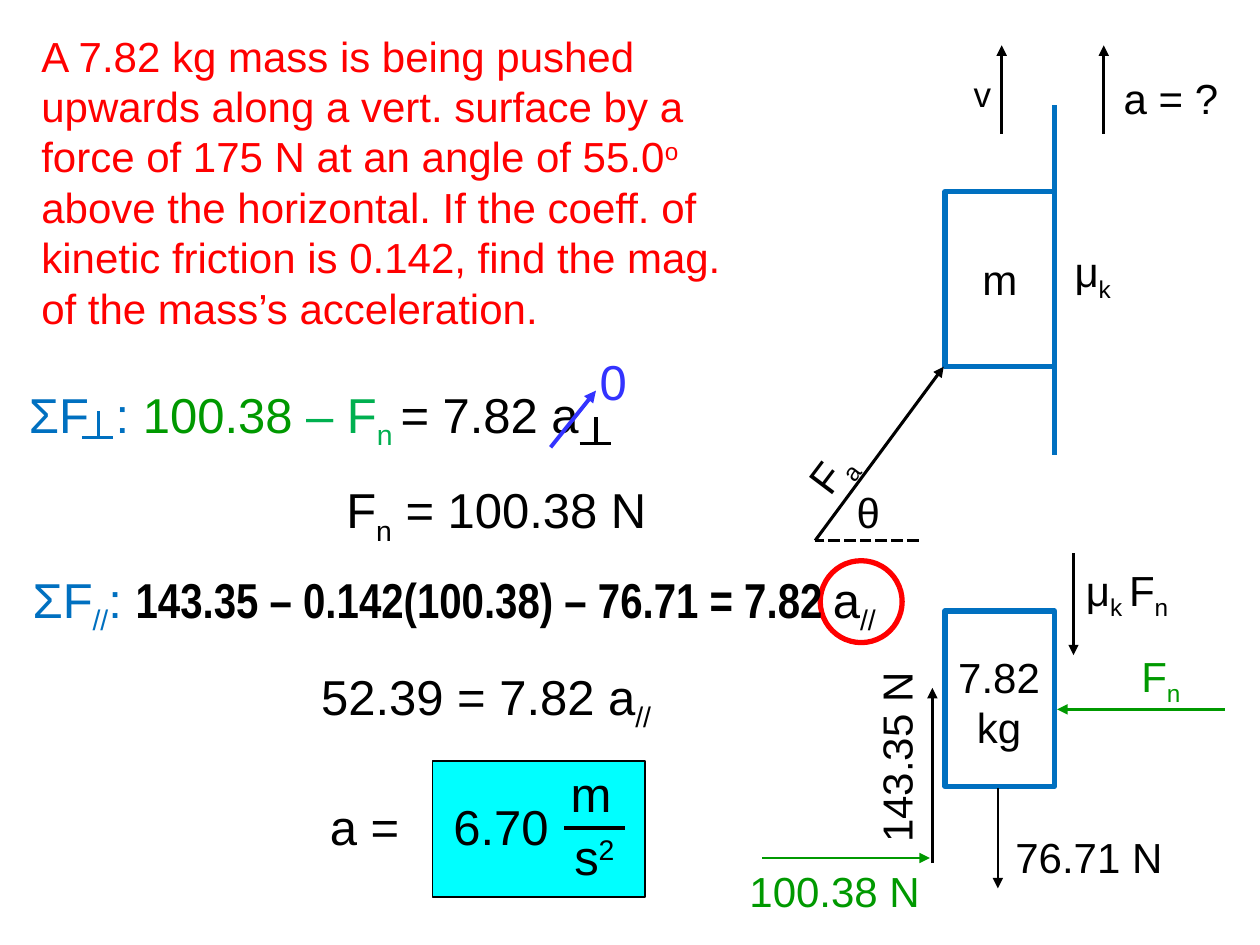
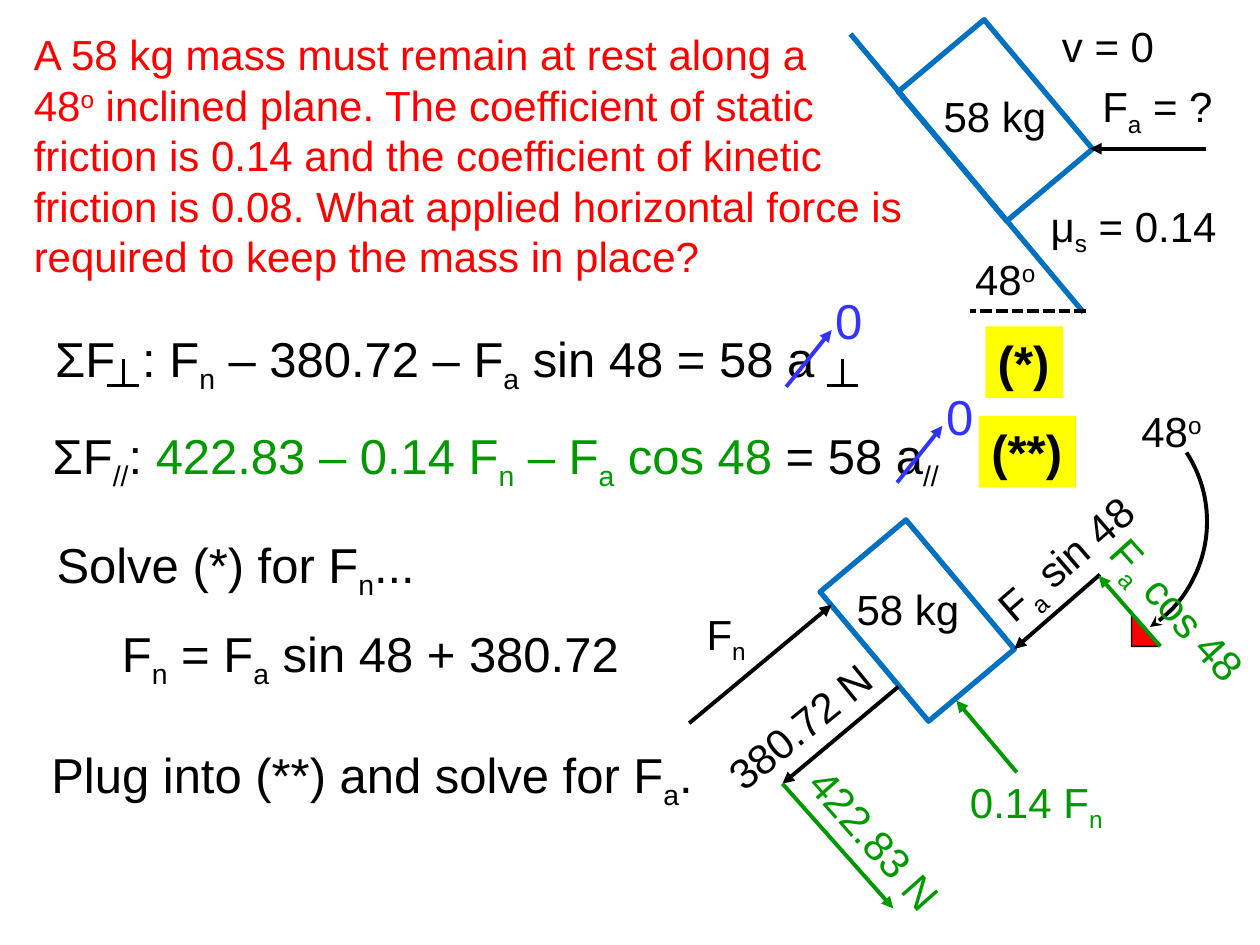
import lxml.etree
import pptx
import pptx.dml.color
import pptx.enum.dml
import pptx.enum.shapes
import pptx.enum.text
import pptx.oxml.ns
import pptx.util

Inches = pptx.util.Inches
Pt = pptx.util.Pt
RGBColor = pptx.dml.color.RGBColor
MSO_SHAPE = pptx.enum.shapes.MSO_SHAPE
qn = pptx.oxml.ns.qn

BLACK = RGBColor(0x00, 0x00, 0x00)
WHITE = RGBColor(0xFF, 0xFF, 0xFF)
RED = RGBColor(0xFF, 0x00, 0x00)
BLUE = RGBColor(0x00, 0x70, 0xC0)
GREEN = RGBColor(0x00, 0x99, 0x00)
LIGHT_GREEN = RGBColor(0x00, 0xB0, 0x50)
VIOLET = RGBColor(0x33, 0x33, 0xFF)
CYAN = RGBColor(0x00, 0xFF, 0xFF)
YELLOW = RGBColor(0xFF, 0xFF, 0x00)

BASELINES = {"_": "-25000", "^": "30000"}
COLOR_MARKS = {"~": GREEN, "@": LIGHT_GREEN, "#": BLACK, "!": BLACK}


def add_text(slide, left, top, width, height, size, color, text, rotation=0, tab_stop=None):
    box = slide.shapes.add_textbox(Inches(left), Inches(top), Inches(width), Inches(height))
    box.rotation = rotation
    frame = box.text_frame
    frame.word_wrap = True
    for index, line in enumerate(text.split("\n")):
        paragraph = frame.paragraphs[0] if index == 0 else frame.add_paragraph()
        if tab_stop:
            tabs = lxml.etree.SubElement(paragraph._p.get_or_add_pPr(), qn("a:tabLst"))
            lxml.etree.SubElement(tabs, qn("a:tab"), pos=str(Inches(tab_stop)), algn="l")
        paragraph.font.name = "Arial"
        paragraph.font.size = Pt(size)
        paragraph.font.color.rgb = color
        run_color = color
        for part in line.split("|"):
            mark = part[0]
            run_color = COLOR_MARKS.get(mark, run_color)
            run = paragraph.add_run()
            run.text = part[1:] if mark in BASELINES or mark in COLOR_MARKS else part
            if run_color != color:
                run.font.color.rgb = run_color
            if mark in BASELINES:
                run.font._rPr.set("baseline", BASELINES[mark])
            if mark == "!":
                run.font.name = "Arial Narrow"
                run.font.bold = True
    return box


def add_line(slide, x1, y1, x2, y2, color, width, arrow=True):
    connector = slide.shapes.add_connector(
        pptx.enum.shapes.MSO_CONNECTOR.STRAIGHT, Inches(x1), Inches(y1), Inches(x2), Inches(y2))
    connector.line.color.rgb = color
    connector.line.width = Pt(width)
    if arrow:
        lxml.etree.SubElement(connector.line._get_or_add_ln(), qn("a:tailEnd"), type="triangle")
    lxml.etree.SubElement(connector._element.spPr, qn("a:effectLst"))
    return connector


presentation = pptx.Presentation()
presentation.slide_width = Inches(10)
presentation.slide_height = Inches(7.5)
blank_layout = presentation.slide_layouts[6]
wall_slide = presentation.slides.add_slide(blank_layout)
incline_slide = presentation.slides.add_slide(blank_layout)

add_line(wall_slide, 8.37, 3.61, 8.37, 0.83, BLUE, 3, arrow=False)
add_line(incline_slide, 8.6, 2.48, 6.75, 0.27, BLUE, 3, arrow=False)

RECTANGLE = MSO_SHAPE.RECTANGLE
shapes = [
    (wall_slide, RECTANGLE, 7.5, 1.52, 0.87, 1.39, 0, WHITE, BLUE, 3),
    (wall_slide, RECTANGLE, 7.5, 4.85, 0.87, 1.39, 0, WHITE, BLUE, 3),
    (wall_slide, MSO_SHAPE.OVAL, 6.51, 4.45, 0.65, 0.65, 0, None, RED, 3),
    (wall_slide, RECTANGLE, 3.43, 6.04, 1.69, 1.08, 0, CYAN, BLACK, 0.75),
    (incline_slide, RECTANGLE, 7.23, 0.51, 1.34, 0.89, 50, None, BLUE, 3),
    (incline_slide, RECTANGLE, 6.61, 4.48, 1.34, 0.89, 50, None, BLUE, 3),
    (incline_slide, MSO_SHAPE.RIGHT_TRIANGLE, 8.98, 4.88, 0.22, 0.25, 0, RED, BLACK, 0.75),
    (incline_slide, MSO_SHAPE.ARC, 7.58, 3.14, 2, 2, 56.8, None, BLACK, 2.25),
]
for slide, kind, left, top, width, height, rotation, fill, outline, weight in shapes:
    shape = slide.shapes.add_shape(kind, Inches(left), Inches(top), Inches(width), Inches(height))
    shape.rotation = rotation
    shape.shadow.inherit = False
    shape.line.color.rgb = outline
    shape.line.width = Pt(weight)
    if fill is None:
        shape.fill.background()
    else:
        shape.fill.solid()
        shape.fill.fore_color.rgb = fill
    if kind == MSO_SHAPE.ARC:
        lxml.etree.SubElement(shape.line._get_or_add_ln(), qn("a:tailEnd"), type="stealth")

wall_texts = [
    (0.23, 0.19, 5.64, 2.52, 24, RED,
     "A 7.82 kg mass is being pushed upwards along a vert. surface by a force of 175 N at an "
     "angle of 55.0|^o |above the horizontal. If the coeff. of kinetic friction is 0.142, "
     "find the mag. of the mass’s acceleration."),
    (7.63, 0.53, 0.57, 0.54, 20, BLACK, "v"),
    (8.82, 0.53, 1.03, 0.54, 24, BLACK, "a = ?"),
    (8.43, 1.9, 0.66, 0.52, 24, BLACK, "μ|_k"),
    (6.2, 3.22, 1.19, 0.52, 24, BLACK, "F|_a", 307),
    (6.7, 3.81, 1.03, 0.57, 24, BLACK, "θ"),
    (8.52, 4.43, 1, 0.5, 24, BLACK, "μ|_k |F|_n"),
    (8.96, 5.11, 0.6, 0.5, 24, GREEN, "F|_n"),
    (6.26, 5.78, 1.7, 0.5, 24, BLACK, " 143.35 N", 270),
    (7.96, 6.55, 1.45, 0.5, 24, BLACK, "76.71 N"),
    (5.85, 6.82, 1.57, 0.5, 24, GREEN, "100.38 N"),
    (0.13, 3, 5.25, 0.57, 28, BLUE, "ΣF\t: |~100.38 |@– F|_n |#= 7.82 a", 0, 0.69),
    (2.65, 3.76, 2.7, 0.57, 28, BLACK, "F|_n| = 100.38 N"),
    (0.16, 4.47, 7.38, 0.57, 28, BLUE,
     "ΣF|_//|: |!143.35 – 0.142(100.38) – 76.71 = 7.82 |#a|_//"),
    (2.45, 5.24, 3, 0.57, 28, BLACK, "52.39 = 7.82 a|_//"),
    (2.52, 6.27, 2.1, 0.57, 28, BLACK, "a =\t6.70", 0, 0.98),
    (4.43, 6.01, 0.6, 0.57, 28, BLACK, "m"),
    (4.46, 6.51, 0.6, 0.57, 28, BLACK, "s|^2"),
]
for text in wall_texts:
    add_text(wall_slide, *text)

for left, top, width, height, text in [
    (7.46, 1.96, 0.95, 0.5, "m"),
    (7.48, 5.12, 0.9, 0.91, "7.82\nkg"),
]:
    mass_label = add_text(wall_slide, left, top, width, height, 24, BLACK, text)
    for paragraph in mass_label.text_frame.paragraphs:
        paragraph.alignment = pptx.enum.text.PP_ALIGN.CENTER

incline_texts = [
    (0.17, 0.18, 7.24, 2.12, 24, RED,
     "A 58 kg mass must remain at rest along a\n"
     "48|^o| inclined plane. The coefficient of static\n"
     "friction is 0.14 and the coefficient of kinetic\n"
     "friction is 0.08. What applied horizontal force is required to keep the mass in place?"),
    (8.33, 0.11, 1.13, 0.6, 24, BLACK, "v = 0"),
    (8.65, 0.59, 1.13, 0.6, 24, BLACK, "F|_a| = ?"),
    (7.39, 0.67, 1.1, 0.6, 24, BLACK, "58 kg"),
    (8.24, 1.54, 1.64, 0.6, 24, BLACK, "μ|_s| = 0.14"),
    (7.64, 1.96, 0.79, 0.6, 24, BLACK, "48|^o"),
    (8.96, 3.17, 0.79, 0.6, 24, BLACK, "48|^o"),
    (6.7, 4.58, 1.1, 0.6, 24, BLACK, "58 kg"),
    (7.71, 4.08, 1.76, 0.6, 24, BLACK, "F|_a| sin 48", 319.1),
    (8.51, 4.59, 1.64, 0.6, 24, GREEN, "F|_a| cos 48", 48),
    (5.51, 4.78, 0.74, 0.6, 24, BLACK, "F|_n"),
    (5.59, 5.46, 1.68, 0.6, 24, BLACK, "380.72 N", 320.9),
    (6.19, 6.42, 1.56, 0.45, 24, GREEN, "422.83 N", 48.5),
    (7.6, 6.11, 1.34, 0.6, 24, GREEN, "0.14 F|_n"),
    (0.34, 2.56, 6.5, 0.57, 28, BLACK,
     "ΣF\t: F|_n| – 380.72 – F|_a| sin 48 = 58 a", 0, 0.69),
    (0.32, 3.33, 7.5, 0.57, 28, BLACK,
     "ΣF|_//|: |~422.83 – 0.14 F|_n| – F|_a| cos 48|# = 58 a|_//"),
    (0.35, 4.19, 3.15, 0.57, 28, BLACK, "Solve (*) for F|_n|..."),
    (0.87, 4.9, 4.4, 0.57, 28, BLACK, "F|_n| = F|_a| sin 48 + 380.72"),
    (0.31, 5.86, 5.4, 0.57, 28, BLACK, "Plug into (**) and solve for F|_a|."),
]
for text in incline_texts:
    add_text(incline_slide, *text)

for left, top, width, text in [(7.77, 3.3, 0.77, "(**)"), (7.82, 2.59, 0.62, "(*)")]:
    equation_tag = add_text(incline_slide, left, top, width, 0.57, 28, BLACK, text)
    equation_tag.text_frame.paragraphs[0].font.bold = True
    equation_tag.fill.solid()
    equation_tag.fill.fore_color.rgb = YELLOW

arrows = [
    (wall_slide, 7.95, 1.06, 7.95, 0.36, BLACK, 1.5),
    (wall_slide, 8.76, 1.06, 8.76, 0.36, BLACK, 1.5),
    (wall_slide, 6.47, 4.29, 7.49, 2.91, BLACK, 1.75),
    (wall_slide, 8.52, 4.39, 8.52, 5.2, BLACK, 1.5),
    (wall_slide, 9.72, 5.63, 8.39, 5.63, GREEN, 1.5),
    (wall_slide, 7.4, 6.85, 7.4, 5.46, BLACK, 1.5),
    (wall_slide, 7.92, 6.25, 7.92, 7.05, BLACK, 1.5),
    (wall_slide, 6.05, 6.81, 7.38, 6.81, GREEN, 1.5),
    (incline_slide, 9.57, 1.18, 8.65, 1.18, BLACK, 2.25),
    (incline_slide, 8.73, 4.56, 8.05, 5.15, BLACK, 2.25),
    (incline_slide, 9.21, 5.13, 8.72, 4.57, GREEN, 2.25),
    (incline_slide, 7.13, 5.45, 6.21, 6.22, BLACK, 2.25),
    (incline_slide, 6.21, 6.22, 7.09, 7.21, GREEN, 2.25),
    (incline_slide, 5.47, 5.74, 6.6, 4.8, BLACK, 2.25),
    (incline_slide, 8.07, 6.13, 7.59, 5.56, GREEN, 2.25),
]
for arrow in arrows:
    add_line(*arrow)

add_line(wall_slide, 4.48, 6.57, 4.96, 6.57, BLACK, 2.25, arrow=False)

for slide, left, right, y in [(wall_slide, 6.47, 7.29, 4.29), (incline_slide, 7.7, 8.62, 2.47)]:
    horizontal = add_line(slide, right, y, left, y, BLACK, 2.25, arrow=False)
    horizontal.line.dash_style = pptx.enum.dml.MSO_LINE.SQUARE_DOT

for slide, left, bottom, color in [
    (wall_slide, 0.65, 3.47, BLUE),
    (wall_slide, 4.6, 3.52, BLACK),
    (incline_slide, 0.85, 3.06, BLACK),
    (incline_slide, 6.56, 3.06, BLACK),
]:
    middle = left + 0.13
    add_line(slide, left, bottom, left + 0.25, bottom, color, 1.75, arrow=False)
    add_line(slide, middle, bottom, middle, bottom - 0.21, color, 1.75, arrow=False)

for slide, left, top in [
    (wall_slide, 4.66, 2.74),
    (incline_slide, 6.53, 2.26),
    (incline_slide, 7.41, 3.02),
]:
    add_text(slide, left, top, 0.42, 0.57, 28, VIOLET, "0")
    add_line(slide, left - 0.29, top + 0.81, left + 0.07, top + 0.36, VIOLET, 2.25)

presentation.save("out.pptx")
